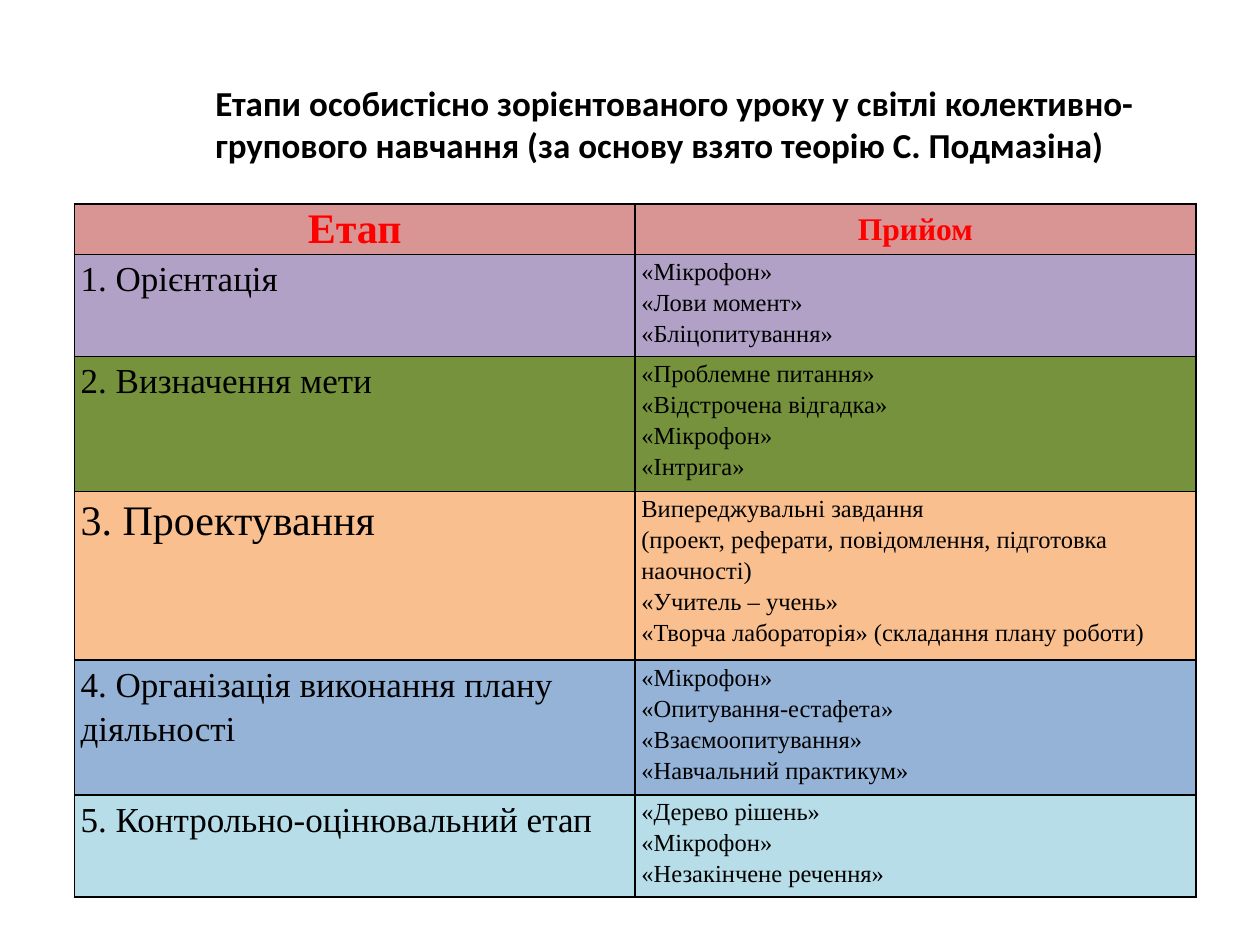
from lxml import etree
from pptx import Presentation
from pptx.dml.color import RGBColor
from pptx.enum import text
from pptx.oxml import ns
from pptx.util import Inches, Pt

BLACK = RGBColor(0, 0, 0)
RED = RGBColor(0xFF, 0, 0)
ROSE = RGBColor(0xD9, 0x95, 0x94)
LILAC = RGBColor(0xB2, 0xA1, 0xC7)
GREEN = RGBColor(0x76, 0x92, 0x3C)
PEACH = RGBColor(0xFA, 0xBF, 0x8F)
BLUE = RGBColor(0x95, 0xB3, 0xD7)
AQUA = RGBColor(0xB6, 0xDD, 0xE8)

TITLE = ("Етапи особистісно зорієнтованого уроку у світлі колективно-групового "
         "навчання (за основу взято теорію С. Подмазіна)")
HEADS = [("Етап", 24), ("Прийом", 18)]
# Stage, its size, row height, fill, methods
STAGES = [
    ("1. Орієнтація", 20, 0.81, LILAC,
     ["«Мікрофон»", "«Лови момент»", "«Бліцопитування»"]),
    ("2. Визначення мети", 20, 1.07, GREEN,
     ["«Проблемне питання»", "«Відстрочена відгадка»", "«Мікрофон»", "«Інтрига»"]),
    ("3. Проектування", 24, 1.34, PEACH,
     ["Випереджувальні завдання",
      "(проект, реферати, повідомлення, підготовка наочності)",
      "«Учитель – учень»", "«Творча лабораторія» (складання плану роботи)"]),
    ("4. Організація виконання плану діяльності", 20, 1.07, BLUE,
     ["«Мікрофон»", "«Опитування-естафета»", "«Взаємоопитування»",
      "«Навчальний практикум»"]),
    ("5. Контрольно-оцінювальний етап", 20, 0.81, AQUA,
     ["«Дерево рішень»", "«Мікрофон»", "«Незакінчене речення»"]),
]


def style(para, face, size, color, bold):
    for run in para.runs:
        font = run.font
        font.name, font.size, font.bold = face, Pt(size), bold
        font.color.rgb = color


def add_borders(cell):
    props = cell._tc.get_or_add_tcPr()
    for spot, side in enumerate(("lnL", "lnR", "lnT", "lnB")):
        line = etree.Element(ns.qn("a:" + side), w=str(Pt(1)))
        fill = etree.SubElement(line, ns.qn("a:solidFill"))
        etree.SubElement(fill, ns.qn("a:srgbClr"), val=str(BLACK))
        props.insert(spot, line)


def fill_cell(cell, lines, size, fill, head=False):
    cell.margin_left = cell.margin_right = Inches(0.05)
    cell.margin_top = cell.margin_bottom = 0
    cell.vertical_anchor = text.MSO_ANCHOR.MIDDLE if head else text.MSO_ANCHOR.TOP
    cell.fill.solid()
    cell.fill.fore_color.rgb = fill
    cell.text_frame.text = "\n".join(lines)
    for para in cell.text_frame.paragraphs:
        if head:
            para.alignment = text.PP_ALIGN.CENTER
        else:
            para.line_spacing = 1.15
        style(para, "Times New Roman", size, RED if head else BLACK, head)
    add_borders(cell)


def add_title(slide, left, top, width, height):
    title = slide.shapes.title
    title.left, title.top = Inches(left), Inches(top)
    title.width, title.height = Inches(width), Inches(height)
    frame = title.text_frame
    frame.text = TITLE
    frame.word_wrap = True
    frame.auto_size = text.MSO_AUTO_SIZE.NONE
    frame.vertical_anchor = text.MSO_ANCHOR.TOP
    para = frame.paragraphs[0]
    para.alignment = text.PP_ALIGN.LEFT
    style(para, "Calibri", 20, BLACK, True)


def add_stages(slide, left, top, width, height):
    frame = slide.shapes.add_table(
        len(STAGES) + 1, len(HEADS),
        Inches(left), Inches(top), Inches(width), Inches(height))
    table = frame.table

    # Header row
    table.rows[0].height = Inches(0.4)
    for col, (name, size) in enumerate(HEADS):
        fill_cell(table.cell(0, col), [name], size, ROSE, head=True)

    # One row for each stage
    for row, (name, size, tall, fill, ways) in enumerate(STAGES, 1):
        table.rows[row].height = Inches(tall)
        fill_cell(table.cell(row, 0), [name], size, fill)
        fill_cell(table.cell(row, 1), ways, 14, fill)


def main():
    deck = Presentation()
    deck.slide_width, deck.slide_height = Inches(10), Inches(7.5)
    slide = deck.slides.add_slide(deck.slide_layouts[5])
    add_title(slide, 1.61, 0.6, 7.87, 0.77)
    add_stages(slide, 0.59, 1.62, 8.9, 5.5)
    deck.save("out.pptx")


if __name__ == "__main__":
    main()
